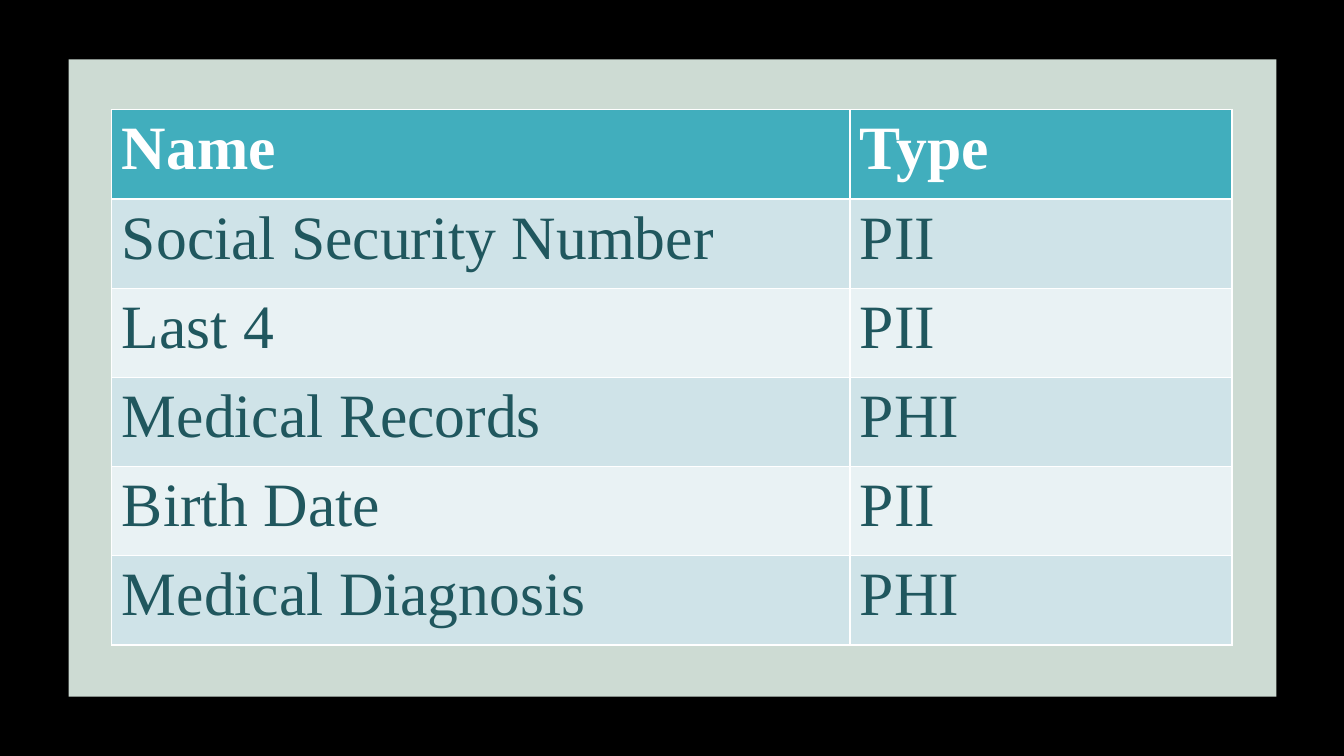
from lxml import etree
from pptx import Presentation
from pptx.dml.color import RGBColor
from pptx.enum.shapes import MSO_SHAPE
from pptx.oxml.ns import qn
from pptx.util import Inches, Pt

RECTANGLE = MSO_SHAPE.RECTANGLE
COLORS = {
    "background": "000000",
    "panel": "CDDBD3",
    "header": "41AEBD",
    "odd_row": "CFE3E8",
    "even_row": "E9F2F4",
    "text": "20575E",
    "white": "FFFFFF",
}
RECORDS = [
    ("Name", "Type"),
    ("Social Security Number", "PII"),
    ("Last 4", "PII"),
    ("Medical Records", "PHI"),
    ("Birth Date", "PII"),
    ("Medical Diagnosis", "PHI"),
]
COLUMN_WIDTHS = (7.32, 3.79)
TABLE_HEIGHT = 5.31


def rgb(name):
    return RGBColor.from_string(COLORS[name])


def add_borders(cell):
    properties = cell._tc.get_or_add_tcPr()
    for side in ("lnL", "lnR", "lnT", "lnB"):
        border = etree.SubElement(properties, qn(f"a:{side}"), w=str(Pt(1)))
        line_fill = etree.SubElement(border, qn("a:solidFill"))
        etree.SubElement(line_fill, qn("a:srgbClr"), val=COLORS["white"])


prs = Presentation()
prs.slide_width = Inches(13.33)
prs.slide_height = Inches(7.5)
slide = prs.slides.add_slide(prs.slide_layouts[6])
slide.background.fill.solid()
slide.background.fill.fore_color.rgb = rgb("background")

panel = slide.shapes.add_shape(
    RECTANGLE, Inches(0.68), Inches(0.59), Inches(11.98), Inches(6.32)
)
panel.shadow.inherit = False
panel.fill.solid()
panel.fill.fore_color.rgb = rgb("panel")
panel.line.fill.background()

records_table = slide.shapes.add_table(
    len(RECORDS), len(COLUMN_WIDTHS),
    Inches(1.11), Inches(1.09), Inches(sum(COLUMN_WIDTHS)), Inches(TABLE_HEIGHT),
).table
for column, width in zip(records_table.columns, COLUMN_WIDTHS):
    column.width = Inches(width)

for row_index, record in enumerate(RECORDS):
    is_header = row_index == 0
    if is_header:
        row_color = "header"
    else:
        row_color = "odd_row" if row_index % 2 else "even_row"
    records_table.rows[row_index].height = Inches(TABLE_HEIGHT / len(RECORDS))
    for column_index, value in enumerate(record):
        cell = records_table.cell(row_index, column_index)
        add_borders(cell)
        cell.fill.solid()
        cell.fill.fore_color.rgb = rgb(row_color)
        cell.text = value
        font = cell.text_frame.paragraphs[0].font
        font.name = "Times New Roman"
        font.size = Pt(44)
        font.bold = is_header
        font.color.rgb = rgb("white" if is_header else "text")

prs.save("out.pptx")
